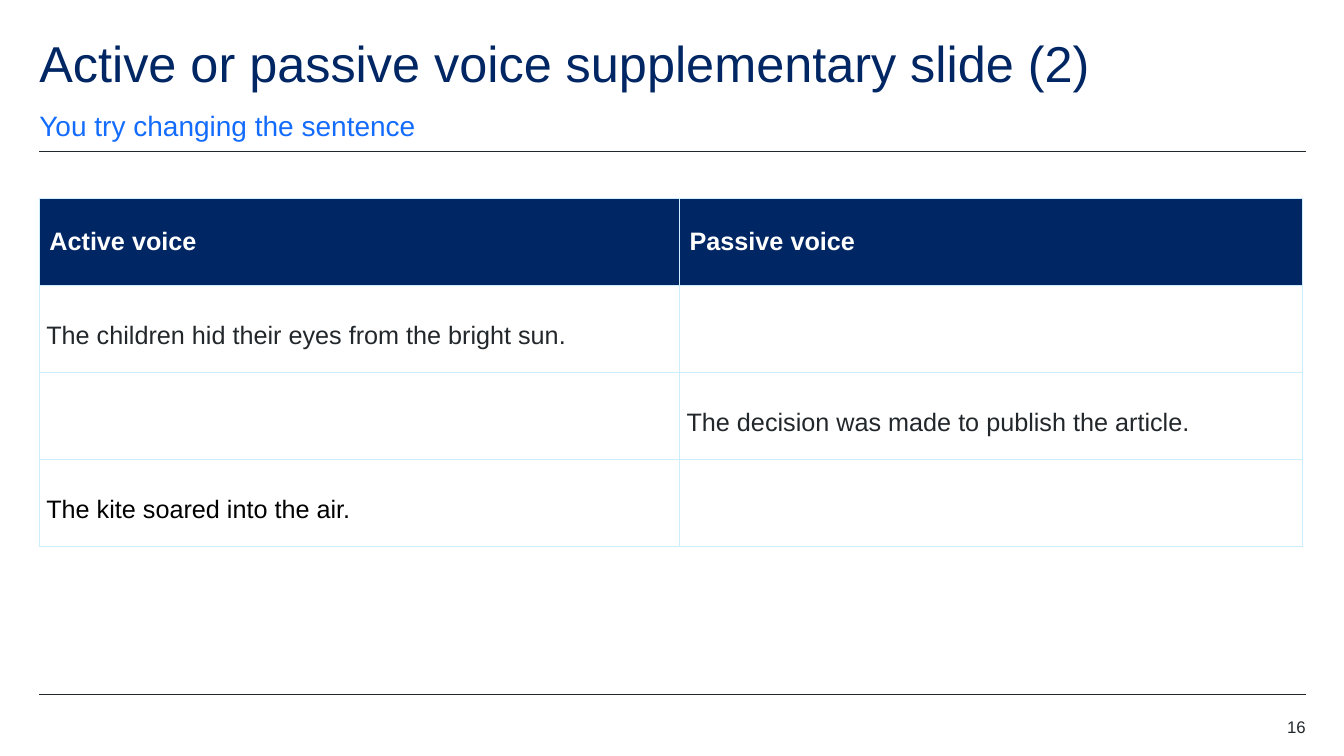
from dataclasses import dataclass

import lxml.etree
import pptx
import pptx.dml.color
import pptx.enum.shapes
import pptx.enum.text
import pptx.oxml.ns
import pptx.slide
import pptx.table
import pptx.util

Inches = pptx.util.Inches
Pt = pptx.util.Pt
Align = pptx.enum.text.PP_ALIGN
Anchor = pptx.enum.text.MSO_ANCHOR


@dataclass(frozen=True)
class Theme:
    font: str = "Arial"
    navy: str = "002664"
    blue: str = "146CFD"
    pale_blue: str = "CBEDFD"
    ink: str = "22272B"
    black: str = "000000"
    white: str = "FFFFFF"
    title_size: int = 36
    subtitle_size: int = 20
    table_size: int = 18
    number_size: int = 12


@dataclass(frozen=True)
class Label:
    text: str
    left: float
    top: float
    width: float
    height: float
    size: int
    color: str
    line_spacing: float
    anchor: Anchor = Anchor.TOP
    align: Align = Align.LEFT


@dataclass(frozen=True)
class Entry:
    text: str
    color: str
    is_header: bool = False


THEME = Theme()
LEFT, RIGHT = 0.39, 12.95
RULE_TOPS = (1.5, 6.89)
LABELS = (
    Label("Active or passive voice supplementary slide (2)", LEFT, 0.39, 11.02, 0.6,
          THEME.title_size, THEME.navy, 0.9),
    Label("You try changing the sentence", LEFT, 1.07, 11.02, 0.34,
          THEME.subtitle_size, THEME.blue, 1.4, anchor=Anchor.BOTTOM),
    Label("16", RIGHT - 0.79, 7.13, 0.79, 0.2,
          THEME.number_size, THEME.ink, 0.9, align=Align.RIGHT),
)
TABLE_TOP, TABLE_HEIGHT = 1.97, 3.45
COLUMN_WIDTHS = (6.35, 6.18)
ROWS = (
    (Entry("Active voice", THEME.white, True), Entry("Passive voice", THEME.white, True)),
    (Entry("The children hid their eyes from the bright sun.", THEME.ink), None),
    (None, Entry("The decision was made to publish the article.", THEME.ink)),
    (Entry("The kite soared into the air.", THEME.black), None),
)


def rgb(color: str) -> pptx.dml.color.RGBColor:
    return pptx.dml.color.RGBColor.from_string(color)


def add_rule(s: pptx.slide.Slide, top: float) -> None:
    line = s.shapes.add_connector(pptx.enum.shapes.MSO_CONNECTOR.STRAIGHT,
                                  Inches(LEFT), Inches(top), Inches(RIGHT), Inches(top))
    line.line.color.rgb = rgb(THEME.ink)
    line.line.width = Pt(0.5)
    lxml.etree.SubElement(line._element.spPr, pptx.oxml.ns.qn("a:effectLst"))


def set_font(p, size: int, color: str, bold: bool = False) -> None:
    p.font.name = THEME.font
    p.font.size = Pt(size)
    p.font.bold = bold
    p.font.color.rgb = rgb(color)


def add_label(s: pptx.slide.Slide, label: Label) -> None:
    sp = s.shapes.add_textbox(Inches(label.left), Inches(label.top),
                              Inches(label.width), Inches(label.height))
    tf = sp.text_frame
    tf.word_wrap = True
    tf.vertical_anchor = label.anchor
    tf.margin_left = tf.margin_right = tf.margin_top = tf.margin_bottom = 0
    p = tf.paragraphs[0]
    p.text = label.text
    p.alignment = label.align
    p.line_spacing = label.line_spacing
    set_font(p, label.size, label.color)


def add_borders(cell: pptx.table._Cell) -> None:
    tc_pr = cell._tc.get_or_add_tcPr()
    for side in ("lnL", "lnR", "lnT", "lnB"):
        ln = lxml.etree.SubElement(tc_pr, pptx.oxml.ns.qn(f"a:{side}"), w=str(Pt(1)))
        fill = lxml.etree.SubElement(ln, pptx.oxml.ns.qn("a:solidFill"))
        lxml.etree.SubElement(fill, pptx.oxml.ns.qn("a:srgbClr"), val=THEME.pale_blue)


def fill_cell(cell: pptx.table._Cell, entry: Entry | None) -> None:
    add_borders(cell)
    if entry and entry.is_header:
        cell.fill.solid()
        cell.fill.fore_color.rgb = rgb(THEME.navy)
    else:
        cell.fill.background()
    if entry is None:
        return
    cell.vertical_anchor = Anchor.MIDDLE
    p = cell.text_frame.paragraphs[0]
    p.text = entry.text
    if not entry.is_header:
        cell.margin_left = cell.margin_right = Inches(0.07)
        cell.margin_top = cell.margin_bottom = 0
        p.line_spacing = 1.5
        p.space_after = Pt(6)
    set_font(p, THEME.table_size, entry.color, entry.is_header)


def add_voice_table(s: pptx.slide.Slide) -> None:
    table = s.shapes.add_table(len(ROWS), len(COLUMN_WIDTHS), Inches(LEFT), Inches(TABLE_TOP),
                               Inches(sum(COLUMN_WIDTHS)), Inches(TABLE_HEIGHT)).table
    table.horz_banding = False
    for column, width in zip(table.columns, COLUMN_WIDTHS):
        column.width = Inches(width)
    for row, entries in zip(table.rows, ROWS):
        for cell, entry in zip(row.cells, entries):
            fill_cell(cell, entry)


def main() -> None:
    prs = pptx.Presentation()
    prs.slide_width, prs.slide_height = Inches(13.33), Inches(7.5)
    s = prs.slides.add_slide(prs.slide_layouts[6])
    for top in RULE_TOPS:
        add_rule(s, top)
    for label in LABELS:
        add_label(s, label)
    add_voice_table(s)
    prs.save("out.pptx")


if __name__ == "__main__":
    main()
